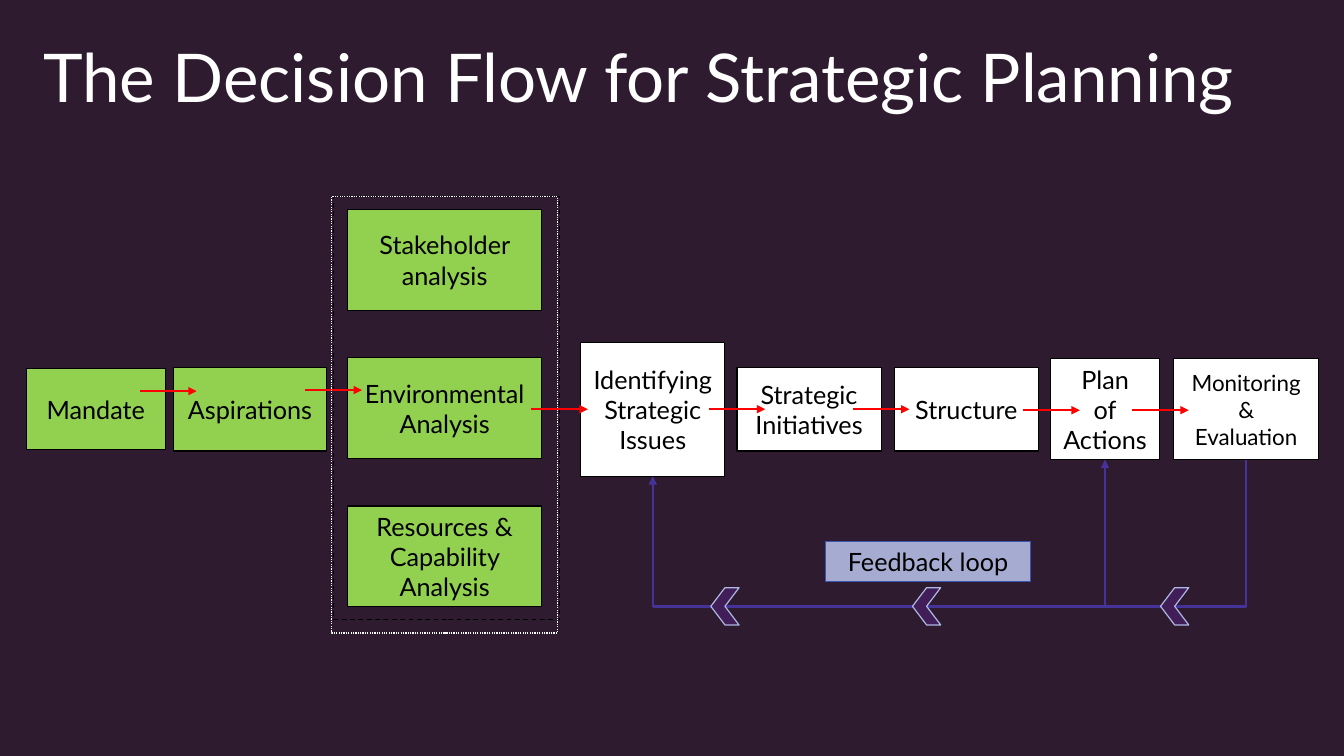
from dataclasses import dataclass

from lxml.etree import SubElement
from pptx import Presentation
from pptx.dml.color import RGBColor
from pptx.enum.dml import MSO_LINE
from pptx.enum.shapes import MSO_CONNECTOR, MSO_SHAPE
from pptx.enum.text import MSO_ANCHOR, PP_ALIGN
from pptx.oxml.ns import qn
from pptx.util import Inches, Pt


@dataclass(frozen=True)
class Theme:
    font: str = "Lato"
    background: str = "2F1B2F"
    title: str = "FFFFFF"
    text: str = "000000"
    outline: str = "000000"
    done: str = "92D050"
    next_step: str = "FFFFFF"
    frame: str = "FFFFFF"
    arrow: str = "FF0000"
    loop: str = "463399"
    loop_label: str = "A6ACD1"
    loop_label_line: str = "3B56B1"
    chevron: str = "411E58"
    chevron_line: str = "ADB9E4"
    title_size: int = 48
    step_size: int = 18
    small_size: int = 16
    thin: float = 0.85


@dataclass(frozen=True)
class Box:
    left: float
    top: float
    width: float
    height: float

    def inside(self, left, top, width, height):
        """Return a box whose offsets are measured from this one."""
        return Box(self.left + left, self.top + top, width, height)

    def lengths(self):
        return [Inches(n) for n in (self.left, self.top, self.width, self.height)]


THEME = Theme()
TITLE = Box(0.33, 0.3, 12.75, 0.91)
FLOW = Box(0.26, 1.95, 12.82, 4.33)
AXIS = 2.11  # centre line of the steps, below the top of the flow

# label, left in the flow, width, height, fill, size
STEPS = [
    ("Mandate", 0, 1.38, 0.8, THEME.done, THEME.step_size),
    ("Aspirations", 1.46, 1.52, 0.83, THEME.done, THEME.step_size),
    ("Identifying Strategic Issues", 5.5, 1.43, 1.33, THEME.next_step, THEME.step_size),
    ("Strategic Initiatives", 7.05, 1.43, 0.83, THEME.next_step, THEME.step_size),
    ("Structure", 8.61, 1.43, 0.83, THEME.next_step, THEME.step_size),
    ("Plan\nof\nActions", 10.16, 1.08, 1, THEME.next_step, THEME.step_size),
    ("Monitoring\n&\nEvaluation", 11.38, 1.44, 1, THEME.next_step, THEME.small_size),
]
ANALYSES = ["Stakeholder analysis", "Environmental Analysis",
            "Resources &\nCapability Analysis"]
# left in the flow, offset from the axis
ARROWS = [(1.13, -0.18), (2.77, -0.19), (5.01, 0), (6.77, 0), (8.2, 0),
          (9.89, 0.01), (10.97, 0.01)]
ARROW_LENGTH = 0.56


def rgb(colour):
    return RGBColor.from_string(colour)


def add_outlined(slide, kind, box, fill, line, width=THEME.thin, dash=None):
    shape = slide.shapes.add_shape(kind, *box.lengths())
    shape.shadow.inherit = False
    if fill:
        shape.fill.solid()
        shape.fill.fore_color.rgb = rgb(fill)
    else:
        shape.fill.background()
    shape.line.color.rgb = rgb(line)
    shape.line.width = Pt(width)
    if dash:
        shape.line.dash_style = dash
    return shape


def style_text(frame, size, colour, align):
    for paragraph in frame.paragraphs:
        paragraph.alignment = align
        paragraph.font.name = THEME.font
        paragraph.font.size = Pt(size)
        paragraph.font.color.rgb = rgb(colour)


def add_labelled(slide, label, box, fill, line=THEME.outline, size=THEME.step_size,
                 width=THEME.thin):
    shape = add_outlined(slide, MSO_SHAPE.RECTANGLE, box, fill, line, width)
    frame = shape.text_frame
    frame.word_wrap = True
    frame.vertical_anchor = MSO_ANCHOR.MIDDLE
    frame.text = label
    style_text(frame, size, THEME.text, PP_ALIGN.CENTER)
    return shape


def add_line(slide, start, end, colour, width=1.5, head=True, kind=MSO_CONNECTOR.STRAIGHT):
    connector = slide.shapes.add_connector(kind, *start, *end)
    connector.line.color.rgb = rgb(colour)
    connector.line.width = Pt(width)
    if head:
        SubElement(connector.line._get_or_add_ln(), qn("a:tailEnd"), type="triangle")
    SubElement(connector._element.spPr, qn("a:effectLst"))
    return connector


def add_title(slide, box):
    title = slide.shapes.title
    title.left, title.top, title.width, title.height = box.lengths()
    title.text_frame.text = "The Decision Flow for Strategic Planning"
    title.text_frame.vertical_anchor = MSO_ANCHOR.MIDDLE
    style_text(title.text_frame, THEME.title_size, THEME.title, PP_ALIGN.LEFT)


def add_steps(slide, box):
    """Centre every step on the axis and return the shapes by label."""
    return {
        label: add_labelled(slide, label, box.inside(left, AXIS - height / 2, width, height),
                            fill, size=size)
        for label, left, width, height, fill, size in STEPS
    }


def add_analyses(slide, box):
    for row, label in enumerate(ANALYSES):
        add_labelled(slide, label, box.inside(0.14, 0.13 + 1.47 * row, 1.92, 1), THEME.done)
    add_outlined(slide, MSO_SHAPE.RECTANGLE, box, None, THEME.outline, dash=MSO_LINE.DASH)


def add_feedback_loop(slide, box, issues, plan, monitoring):
    base = Inches(box.top + 4.07)
    issues_x = issues.left + issues.width // 2
    plan_x = plan.left + plan.width // 2

    loop = add_line(slide, (issues_x, base),
                    (monitoring.left + monitoring.width // 2, monitoring.top + monitoring.height),
                    THEME.loop, 1.75, head=False, kind=MSO_CONNECTOR.ELBOW)
    loop._element.spPr.find(qn("a:prstGeom")).set("prst", "bentConnector2")
    loop.end_connect(monitoring, 2)

    for step, x in ((issues, issues_x), (plan, plan_x)):
        riser = add_line(slide, (x, base), (x, step.top + step.height), THEME.loop)
        riser.end_connect(step, 2)

    add_labelled(slide, "Feedback loop", box.inside(7.93, 3.42, 2.03, 0.4),
                 THEME.loop_label, THEME.loop_label_line, width=0.75)
    for left in (11.25, 8.79, 6.79):
        chevron = add_outlined(slide, MSO_SHAPE.CHEVRON, box.inside(left, 3.88, 0.28, 0.37),
                               THEME.chevron, THEME.chevron_line)
        chevron.rotation = 180


def add_step_arrows(slide, box):
    for left, offset in ARROWS:
        x, y = box.left + left, Inches(box.top + AXIS + offset)
        add_line(slide, (Inches(x), y), (Inches(x + ARROW_LENGTH), y), THEME.arrow)


def add_flow(slide, box):
    steps = add_steps(slide, box)
    add_analyses(slide, box.inside(3.05, 0, 2.24, 4.2))
    issues, _, _, plan, monitoring = list(steps.values())[2:]
    add_feedback_loop(slide, box, issues, plan, monitoring)
    add_step_arrows(slide, box)
    add_outlined(slide, MSO_SHAPE.RECTANGLE, box.inside(3.03, 0, 2.24, box.height),
                 None, THEME.frame, dash=MSO_LINE.ROUND_DOT)


def main():
    deck = Presentation()
    deck.slide_width, deck.slide_height = Inches(13.33), Inches(7.5)
    slide = deck.slides.add_slide(deck.slide_layouts[5])
    slide.background.fill.solid()
    slide.background.fill.fore_color.rgb = rgb(THEME.background)
    add_title(slide, TITLE)
    add_flow(slide, FLOW)
    deck.save("out.pptx")


if __name__ == "__main__":
    main()
